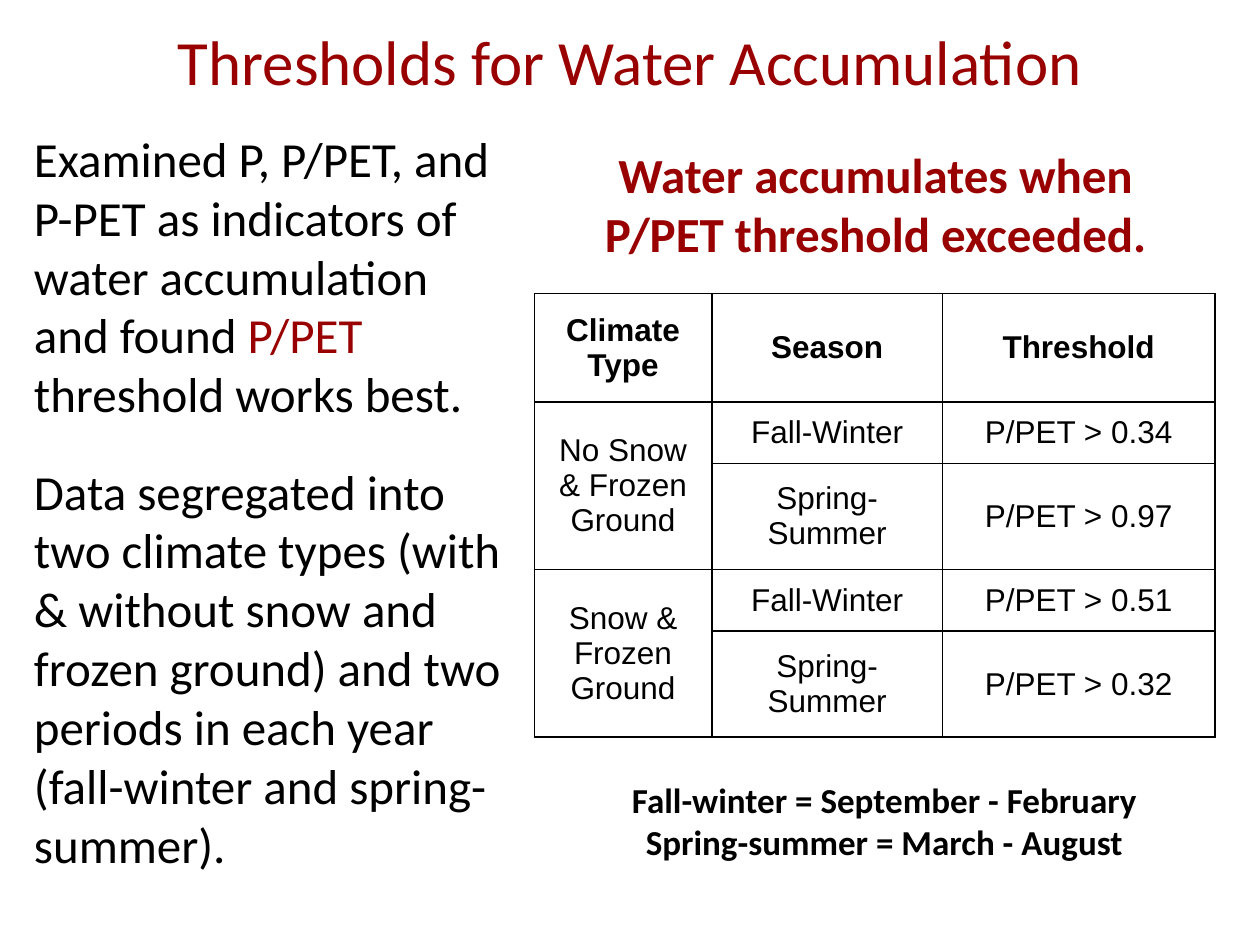
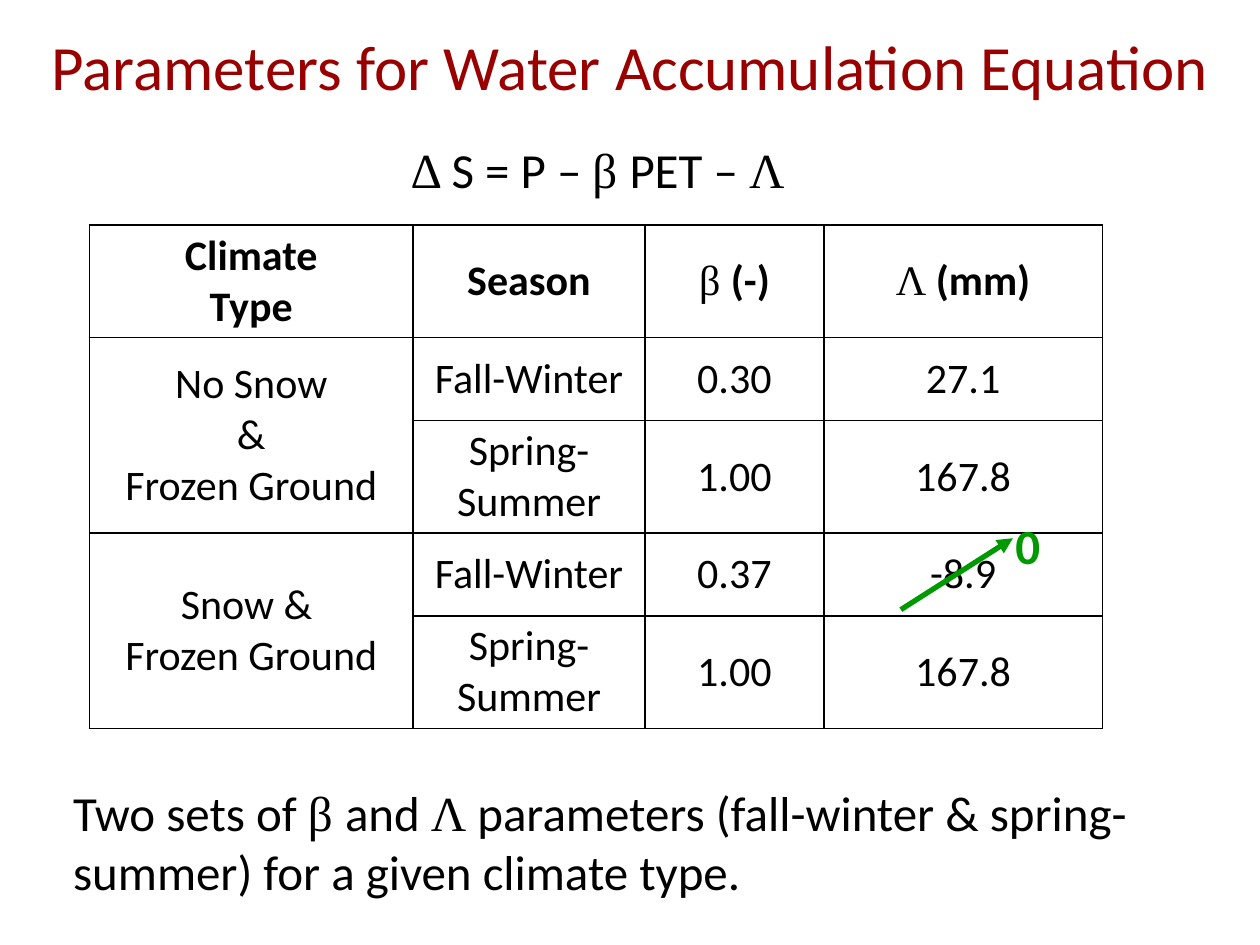
import pptx
import pptx.dml.color
import pptx.enum.shapes
import pptx.enum.text
import pptx.oxml
import pptx.oxml.ns
import pptx.util

Cm, Pt = pptx.util.Cm, pptx.util.Pt
RGBColor = pptx.dml.color.RGBColor
ALIGN = pptx.enum.text.PP_ALIGN
ANCHOR = pptx.enum.text.MSO_ANCHOR
NO_FIT = pptx.enum.text.MSO_AUTO_SIZE.NONE

BLACK = RGBColor(0x00, 0x00, 0x00)
DARK_RED = RGBColor(0x99, 0x00, 0x00)
GREEN = RGBColor(0x00, 0x99, 0x00)
SLIDE_WIDTH, SLIDE_HEIGHT = 25.4, 19.05
TITLE_HEIGHT = 1.68

BASE = {"name": "Calibri", "size": Pt(28), "bold": False, "color": BLACK}
TITLE = {**BASE, "size": Pt(36), "color": DARK_RED}
CLAIM = {**BASE, "bold": True, "color": DARK_RED}
NOTE = {**BASE, "size": Pt(20), "bold": True}
CORRECTION = {**BASE, "bold": True, "color": GREEN}
GREEK = {"name": "Times New Roman", "bold": False}

# A text is a list of paragraphs; a paragraph is a list of runs;
# a run is (words, differences from the format of the whole text).
FALL, SPRING = [[("Fall-Winter", {})]], [[("Spring-Summer", {})]]
CLIMATE_HEAD = [[("Climate", {})], [("Type", {})]]
SEASON_HEAD = [[("Season", {})]]

THRESHOLDS = {
    "title": "Thresholds for Water Accumulation",
    "title_top": 0.38,
    "body_box": (0.43, 2.46, 10.11, 15.37),
    "body": [
        [("Examined P, P/PET, and P-PET as indicators of water accumulation "
          "and found ", {}),
         ("P/PET", {"color": DARK_RED}),
         (" threshold works best.", {})],
        [("Data segregated into two climate types (with & without snow and "
          "frozen ground) and two periods in each year (fall-winter and "
          "spring-summer).", {})],
    ],
    "table": {
        "corner": (10.77, 5.92),
        "columns": (3.58, 4.65, 5.49),
        "row_heights": (2.18, 1.24, 2.14),
        "format": {**BASE, "name": "Arial", "size": Pt(18)},
        "head": [CLIMATE_HEAD, SEASON_HEAD, [[("Threshold", {})]]],
        "climates": [
            ([[("No Snow & Frozen Ground", {})]],
             ["P/PET > 0.34"], ["P/PET > 0.97"]),
            ([[("Snow & Frozen Ground", {})]],
             ["P/PET > 0.51"], ["P/PET > 0.32"]),
        ],
    },
    "labels": [
        ((12.32, 15.57, 11.02, 1.96), NOTE, ALIGN.CENTER, True,
         [[("Fall-winter = September - February", {})],
          [("Spring-summer = March - August", {})]]),
        ((11.73, 2.79, 11.84, 2.54), CLAIM, ALIGN.CENTER, True,
         [[("Water accumulates when P/PET threshold exceeded.", {})]]),
    ],
}

PARAMETERS = {
    "title": "Parameters for Water Accumulation Equation",
    "title_top": 0.48,
    "body_box": (1.22, 15.65, 23.16, 2.64),
    "body": [
        [("Two sets of ", {}), ("β ", GREEK), ("and ", {}), ("Λ ", GREEK),
         ("parameters (fall-winter & spring-summer) for a given climate "
          "type.", {})],
    ],
    "table": {
        "corner": (1.8, 4.54),
        "columns": (6.53, 4.67, 3.61, 5.61),
        "row_heights": (2.26, 1.67, 2.26),
        "format": {**BASE, "size": Pt(24)},
        "head": [CLIMATE_HEAD, SEASON_HEAD,
                 [[("β ", GREEK), ("(-)", {})]],
                 [[("Λ ", GREEK), ("(mm)", {})]]],
        "climates": [
            ([[("No Snow", {})], [("&", {})], [("Frozen Ground", {})]],
             ["0.30", "27.1"], ["1.00", "167.8"]),
            ([[("Snow & ", {})], [("Frozen Ground", {})]],
             ["0.37", "-8.9"], ["1.00", "167.8"]),
        ],
    },
    "labels": [
        ((8.03, 2.69, 8.13, 1.45), BASE, ALIGN.LEFT, False,
         [[("Δ ", GREEK), ("S = P – ", {}), ("β ", GREEK),
           ("PET – ", {}), ("Λ", GREEK)]]),
        ((20.22, 10.26, 1.02, 1.45), CORRECTION, ALIGN.LEFT, False,
         [[("0", {})]]),
    ],
}
CORRECTION_ARROW = (18.16, 12.29, 20.42, 10.85)


def lengths(values):
    return [Cm(value) for value in values]


def write(frame, paragraphs, text_format, align, gap=0):
    """Fill a text frame; gap is the space in points between paragraphs."""
    for number, runs in enumerate(paragraphs):
        paragraph = frame.add_paragraph() if number else frame.paragraphs[0]
        paragraph.alignment = align
        paragraph.space_before = Pt(gap if number else 0)
        for words, changes in runs:
            run = paragraph.add_run()
            run.text = words
            for key, value in {**text_format, **changes}.items():
                if key == "color":
                    run.font.color.rgb = value
                else:
                    setattr(run.font, key, value)


def place(shape, box):
    for side, value in zip(("left", "top", "width", "height"), lengths(box)):
        setattr(shape, side, value)


def add_title(slide, words, top):
    title = slide.shapes.title
    place(title, (0, top, SLIDE_WIDTH, TITLE_HEIGHT))
    title.text_frame.auto_size = NO_FIT
    title.text_frame.vertical_anchor = ANCHOR.MIDDLE
    write(title.text_frame, [[(words, {})]], TITLE, ALIGN.CENTER)


def add_body(slide, paragraphs, box):
    body = slide.placeholders[1]
    place(body, box)
    body.text_frame.auto_size = NO_FIT
    write(body.text_frame, paragraphs, BASE, ALIGN.LEFT, gap=22)
    for paragraph in body.text_frame.paragraphs:
        properties = paragraph._p.get_or_add_pPr()
        properties.set("marL", "0")
        properties.set("indent", "0")
        add_xml(properties, "<a:buNone {ns}/>")


def add_label(slide, box, text_format, align, wrap, paragraphs):
    frame = slide.shapes.add_textbox(*lengths(box)).text_frame
    frame.word_wrap = wrap
    write(frame, paragraphs, text_format, align)


def add_xml(parent, template):
    namespace = pptx.oxml.ns.nsdecls("a")
    parent.append(pptx.oxml.parse_xml(template.format(ns=namespace)))


def format_cell(cell):
    for side in "LRTB":
        add_xml(cell._tc.get_or_add_tcPr(),
                f'<a:ln{side} {{ns}} w="12700"><a:solidFill>'
                f'<a:srgbClr val="{BLACK}"/></a:solidFill></a:ln{side}>')
    cell.fill.background()
    cell.vertical_anchor = ANCHOR.MIDDLE
    cell.margin_left = cell.margin_right = Cm(0.33)
    cell.margin_top = cell.margin_bottom = Cm(0.1)


def add_climate_table(slide, corner, columns, row_heights, format, head, climates):
    """Draw a heading row, then a fall and a spring row for each climate."""
    head_height, *season_heights = row_heights
    heights = [head_height] + season_heights * len(climates)
    table = slide.shapes.add_table(
        len(heights), len(columns),
        *lengths((*corner, sum(columns), sum(heights)))).table
    table.first_row = table.horz_banding = False
    for column, width in zip(table.columns, lengths(columns)):
        column.width = width
    for row, height in zip(table.rows, lengths(heights)):
        row.height = height
    for cell in table.iter_cells():
        format_cell(cell)

    def fill_row(row, texts, row_format):
        for column, text in enumerate(texts):
            if text:
                write(table.cell(row, column).text_frame, text, row_format,
                      ALIGN.CENTER)

    fill_row(0, head, {**format, "bold": True})
    for number, (climate, fall, spring) in enumerate(climates):
        top = 1 + 2 * number
        table.cell(top, 0).merge(table.cell(top + 1, 0))
        fall_values, spring_values = (
            [[[(value, {})]] for value in values] for values in (fall, spring))
        fill_row(top, [climate, FALL, *fall_values], format)
        fill_row(top + 1, [None, SPRING, *spring_values], format)


def add_arrow(slide, ends):
    arrow = slide.shapes.add_connector(
        pptx.enum.shapes.MSO_CONNECTOR.STRAIGHT, *lengths(ends))
    arrow.line.color.rgb = GREEN
    arrow.line.width = Pt(3)
    add_xml(arrow.line._get_or_add_ln(), '<a:tailEnd {ns} type="triangle"/>')
    add_xml(arrow._element.spPr, "<a:effectLst {ns}/>")


def add_slide(deck, content):
    slide = deck.slides.add_slide(deck.slide_layouts[1])
    add_title(slide, content["title"], content["title_top"])
    add_body(slide, content["body"], content["body_box"])
    add_climate_table(slide, **content["table"])
    for label in content["labels"]:
        add_label(slide, *label)
    return slide


def main():
    deck = pptx.Presentation()
    deck.slide_width, deck.slide_height = lengths((SLIDE_WIDTH, SLIDE_HEIGHT))
    add_slide(deck, THRESHOLDS)
    parameters = add_slide(deck, PARAMETERS)
    add_arrow(parameters, CORRECTION_ARROW)
    deck.save("out.pptx")


if __name__ == "__main__":
    main()
